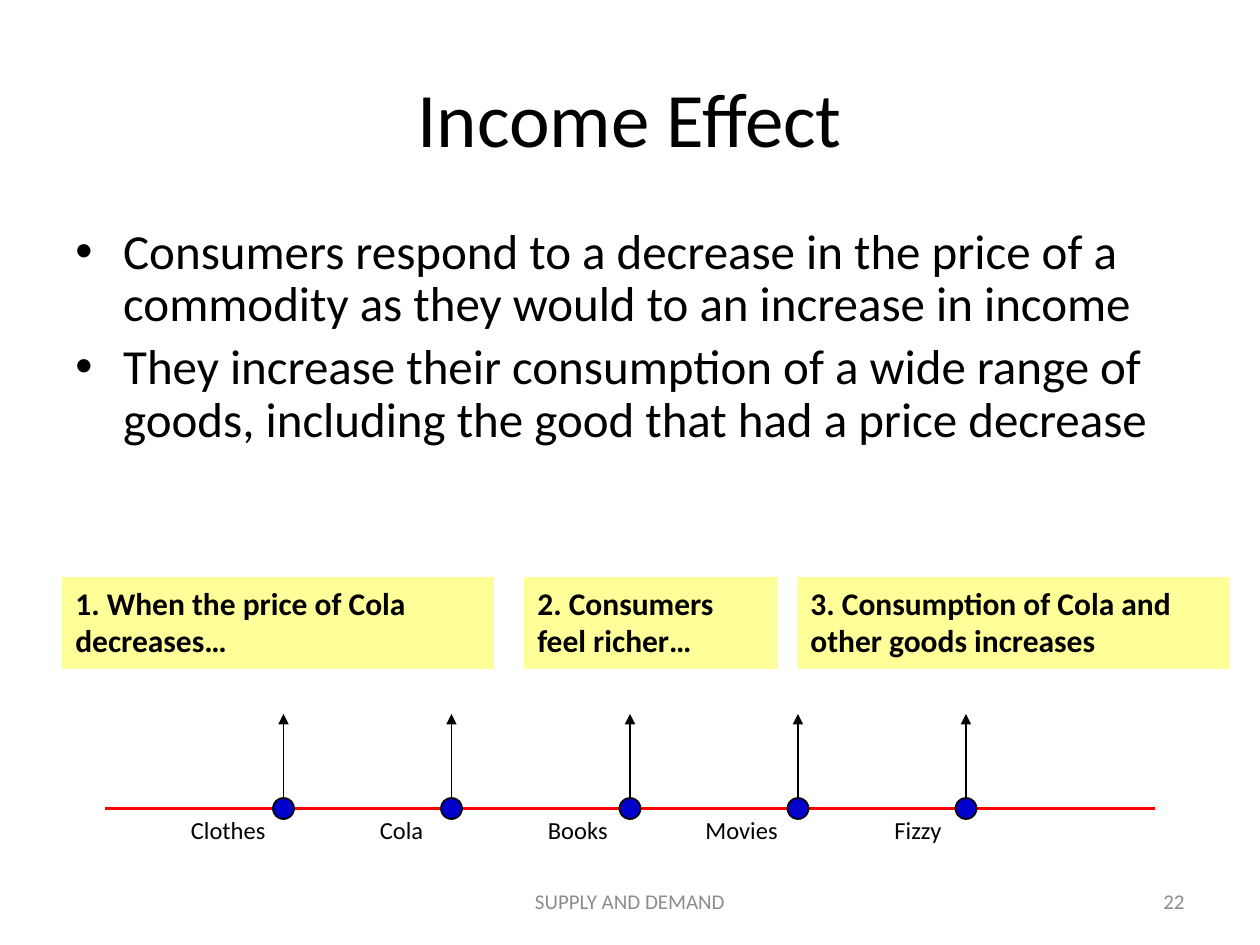
from lxml import etree
from pptx import Presentation
from pptx.dml.color import RGBColor
from pptx.enum.shapes import MSO_CONNECTOR, MSO_SHAPE
from pptx.enum.text import MSO_ANCHOR, PP_ALIGN
from pptx.oxml.ns import qn
from pptx.util import Inches, Pt

LEFT, CENTER, RIGHT = PP_ALIGN.LEFT, PP_ALIGN.CENTER, PP_ALIGN.RIGHT
TOP, MIDDLE = MSO_ANCHOR.TOP, MSO_ANCHOR.MIDDLE
STRAIGHT = MSO_CONNECTOR.STRAIGHT
RECTANGLE, OVAL = MSO_SHAPE.RECTANGLE, MSO_SHAPE.OVAL

FONT = "Calibri"
COLORS = {
    "text": "000000",
    "footer": "8C8C8C",
    "axis": "FF0000",
    "dot": "0000CC",
    "callout": "FFFF99",
}

# The slide is a grid of 120 columns by 90 rows, twelve to the inch
AXIS_ROW = 77
ARROW_TIP_ROW = 68

BULLETS = [
    "Consumers respond to a decrease in the price of a commodity "
    "as they would to an increase in income",
    "They increase their consumption of a wide range of goods, "
    "including the good that had a price decrease",
]
# Text, left column, width in columns
CALLOUTS = [
    ("1. When the price of Cola decreases…", 6, 41),
    ("2. Consumers feel richer…", 50, 24),
    ("3. Consumption of Cola and other goods increases", 76, 41),
]
# Name, dot column, label column, label width in columns
GOODS = [
    ("Clothes", 27, 17, 11),
    ("Cola", 43, 35, 9),
    ("Books", 60, 51, 9),
    ("Movies", 76, 66, 11),
    ("Fizzy", 92, 84, 9),
]


def grid(*cells):
    return [Inches(cell / 12) for cell in cells]


def rgb(name):
    return RGBColor.from_string(COLORS[name])


def write(shape, lines, size, color="text", align=LEFT, anchor=TOP, bold=False):
    frame = shape.text_frame
    frame.word_wrap = True
    frame.vertical_anchor = anchor
    for index, line in enumerate(lines):
        paragraph = frame.add_paragraph() if index else frame.paragraphs[0]
        paragraph.alignment = align
        run = paragraph.add_run()
        run.text = line
        run.font.name = FONT
        run.font.size = Pt(size)
        run.font.bold = bold
        run.font.color.rgb = rgb(color)
    return frame.paragraphs


def add_text(slide, box, lines, size, **style):
    return write(slide.shapes.add_textbox(*grid(*box)), lines, size, **style)


def add_filled(slide, kind, box, fill, line):
    shape = slide.shapes.add_shape(kind, *grid(*box))
    shape.shadow.inherit = False
    shape.fill.solid()
    shape.fill.fore_color.rgb = rgb(fill)
    shape.line.color.rgb = rgb(line)
    shape.line.width = Pt(1)
    return shape


def add_line(slide, start, end, color, width, arrow=False):
    connector = slide.shapes.add_connector(STRAIGHT, *grid(*start, *end))
    connector.line.color.rgb = rgb(color)
    connector.line.width = Pt(width)
    if arrow:
        outline = connector.line._get_or_add_ln()
        etree.SubElement(outline, qn("a:tailEnd"), type="triangle")
    etree.SubElement(connector._element.spPr, qn("a:effectLst"))


def add_bullets(slide, box, lines):
    for paragraph in add_text(slide, box, lines, 28):
        paragraph.line_spacing = 0.9
        paragraph.space_after = Pt(5.6)
        properties = paragraph._p.get_or_add_pPr()
        properties.set("marL", str(Inches(0.38)))
        properties.set("indent", str(-Inches(0.38)))
        etree.SubElement(properties, qn("a:buFont"), typeface="Arial")
        etree.SubElement(properties, qn("a:buChar"), char="•")


def add_title(slide, box, text):
    title = slide.shapes.title
    title.left, title.top, title.width, title.height = grid(*box)
    write(title, [text], 44, align=CENTER, anchor=MIDDLE)


def add_good(slide, name, column, label_column, label_width):
    add_text(slide, (label_column, AXIS_ROW, label_width, 4), [name], 14)
    dot = (column - 1, AXIS_ROW - 1, 2, 2)
    add_filled(slide, OVAL, dot, "dot", "text")


def main():
    presentation = Presentation()
    presentation.slide_width, presentation.slide_height = grid(120, 90)
    slide = presentation.slides.add_slide(presentation.slide_layouts[5])

    # Title and bullets
    add_title(slide, (6, 3.6, 108, 15), "Income Effect")
    add_bullets(slide, (6, 21, 108, 35), BULLETS)

    # Callouts
    for text, column, width in CALLOUTS:
        box = (column, 55, width, 8.6)
        callout = add_filled(slide, RECTANGLE, box, "callout", "callout")
        write(callout, [text], 18, bold=True)

    # Goods on the axis: arrows behind it, dots in front
    for _, column, _, _ in GOODS:
        add_line(slide, (column, AXIS_ROW), (column, ARROW_TIP_ROW),
                 "text", 1, arrow=True)
    add_line(slide, (10, AXIS_ROW), (110, AXIS_ROW), "axis", 2.25)
    for good in GOODS:
        add_good(slide, *good)

    # Footer
    add_text(slide, (41, 83.4, 38, 4.8), ["SUPPLY AND DEMAND"], 12,
             color="footer", align=CENTER, anchor=MIDDLE)
    add_text(slide, (86, 83.4, 28, 4.8), ["22"], 12,
             color="footer", align=RIGHT, anchor=MIDDLE)

    presentation.save("out.pptx")


if __name__ == "__main__":
    main()
